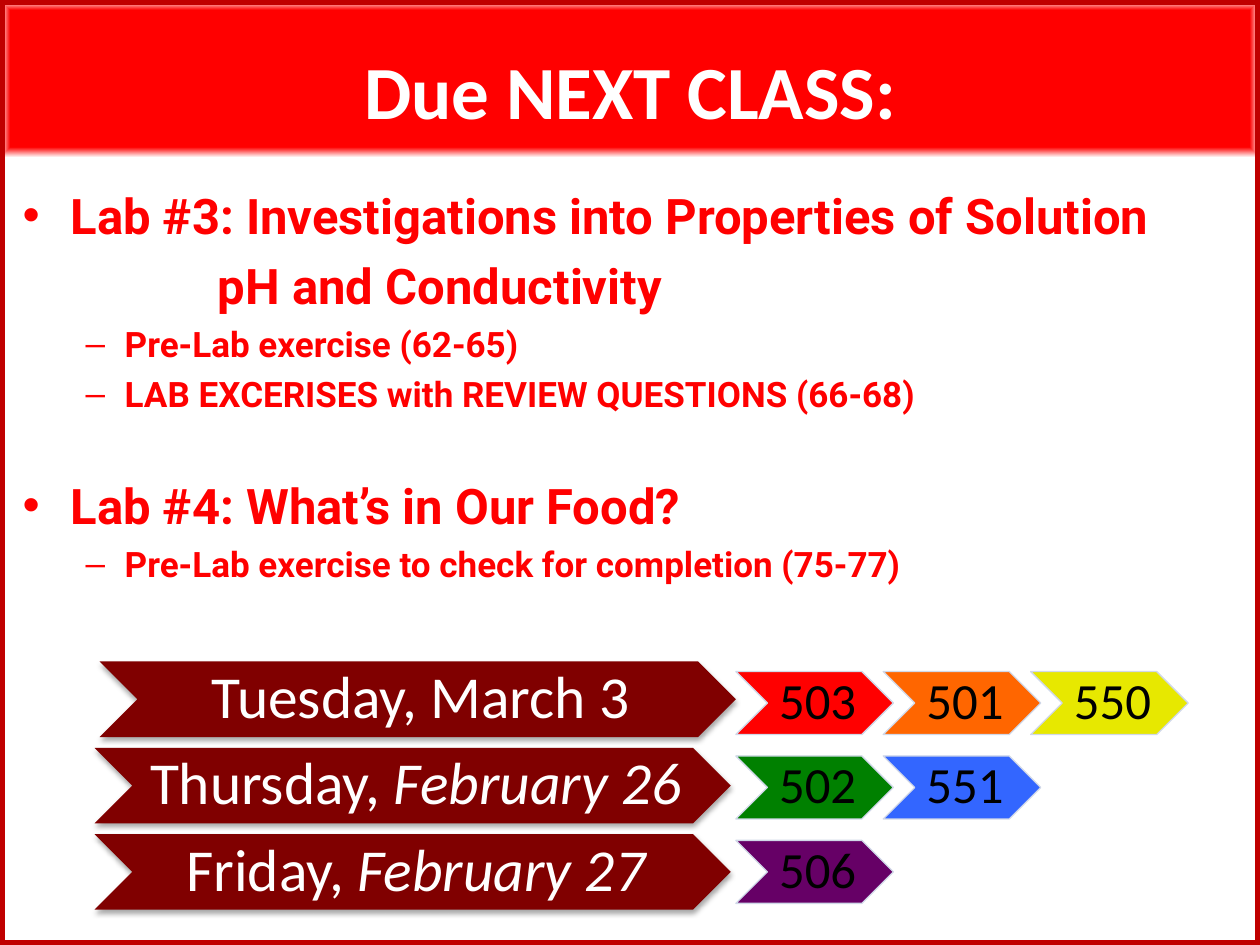
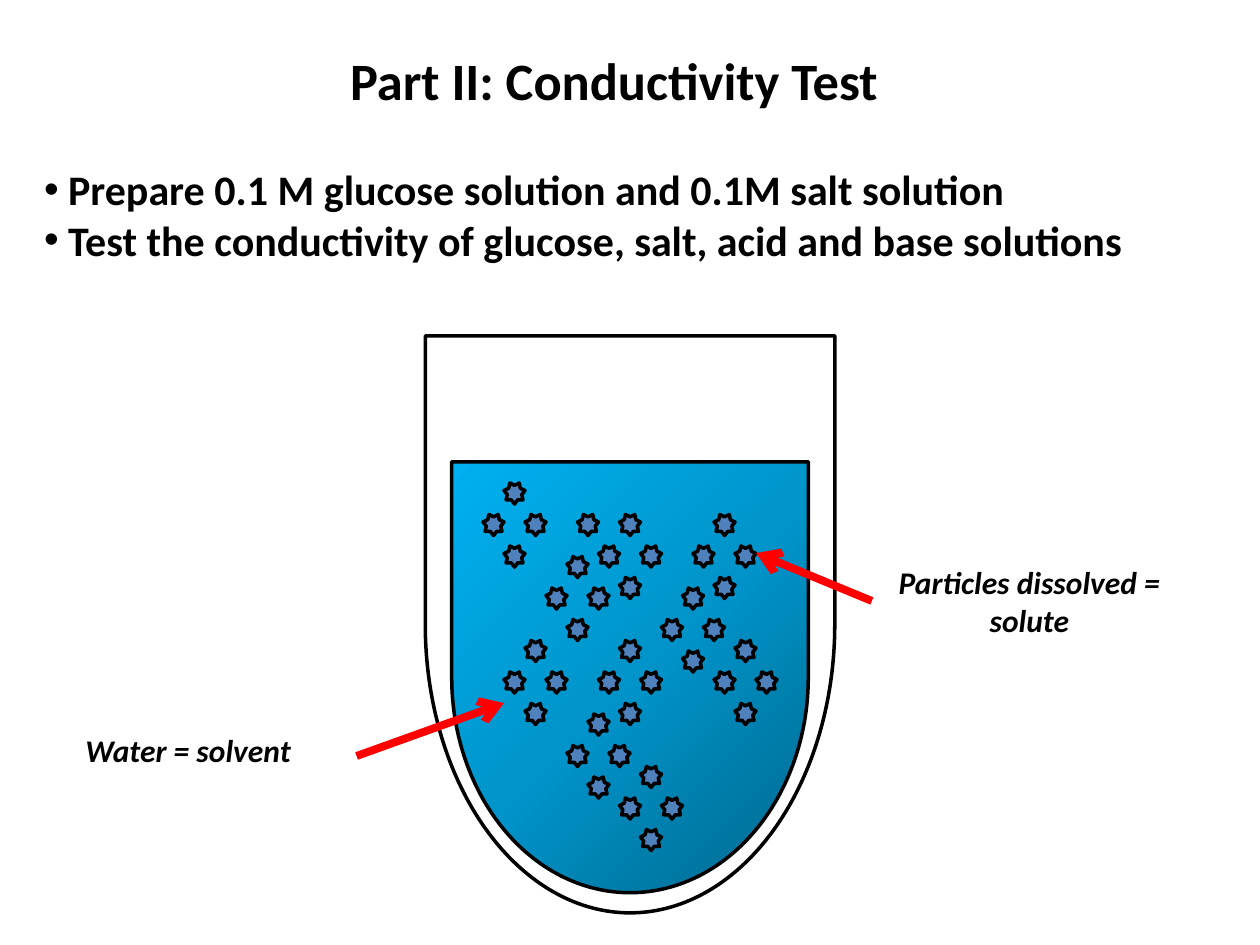
from lxml import etree
from pptx import Presentation
from pptx.dml.color import RGBColor
from pptx.enum.shapes import MSO_CONNECTOR, MSO_SHAPE
from pptx.enum.text import MSO_ANCHOR, MSO_AUTO_SIZE, PP_ALIGN
from pptx.oxml import parse_xml
from pptx.oxml.ns import nsdecls, qn
from pptx.util import Inches, Pt

CENTER, LEFT = PP_ALIGN.CENTER, PP_ALIGN.LEFT
TOP, MIDDLE = MSO_ANCHOR.TOP, MSO_ANCHOR.MIDDLE
CHEVRON, STAR = MSO_SHAPE.CHEVRON, MSO_SHAPE.STAR_7_POINT
TUBE, RECTANGLE = MSO_SHAPE.FLOWCHART_DELAY, MSO_SHAPE.RECTANGLE

WIDTH, HEIGHT = 10, 7.5
COLORS = {
    "white": "FFFFFF", "black": "000000", "red": "FF0000", "frame": "C00000",
    "maroon": "800000", "badge line": "D0D8E8", "orange": "FF6600",
    "yellow": "E7E800", "green": "008000", "blue": "3366FF",
    "purple": "660066", "particle": "4F81BD",
    "deep water": "00688E", "mid water": "0094CA", "light water": "00B0F0",
}

DUE_TITLE = "Due NEXT CLASS:"
# text, level, size, left margin, first-line indent, space before
ASSIGNMENTS = [
    ("Lab #3: Investigations into Properties of Solution", 0, 28, 0.38, -0.38, 6.6),
    ("pH and Conductivity", 0, 28, 1.55, None, 6.6),
    ("Pre-Lab exercise (62-65)", 1, 20, 0.81, -0.31, 4.7),
    ("LAB EXCERISES with REVIEW QUESTIONS (66-68)", 1, 20, 0.81, -0.31, 4.7),
    ("Lab #4: What’s in Our Food?", 0, 28, 0.38, -0.38, 34.6),
    ("Pre-Lab exercise to check for completion (75-77)", 1, 20, 0.81, -0.31, 4.7),
]
# left edge, weekday, date, date in italics, class sections
SCHEDULE = [
    (0.79, "Tuesday, ", "March 3", False,
     [("503", "red"), ("501", "orange"), ("550", "yellow")]),
    (0.75, "Thursday, ", "February 26", True, [("502", "green"), ("551", "blue")]),
    (0.75, "Friday, ", "February 27", True, [("506", "purple")]),
]

TEST_TITLE = "Part II: Conductivity Test"
TEST_STEPS = [
    "Prepare 0.1 M glucose solution and 0.1M salt solution",
    "Test the conductivity of glucose, salt, acid and base solutions",
]
LABELS = [
    ("Water = solvent", (0.58, 5.75, 2.5, 0.4), LEFT),
    ("Particles dissolved = solute", (6.92, 4.42, 2.5, 0.71), CENTER),
]
ARROWS = [((2.83, 6), (4, 5.58)), ((6.92, 4.77), (6, 4.39))]
# particle positions in twelfths of an inch; each cluster is a diamond of four
CELL = 1 / 12
CLUSTER_TOPS = [(65, 56), (68, 49), (70, 61), (59, 49), (56, 68),
                (59, 61), (61, 73), (50, 61), (54, 53), (48, 46)]
DIAMOND = [(0, 0), (2, 3), (-2, 3), (0, 6)]
LONE_PARTICLE = (55, 49)


def rgb(name):
    return RGBColor.from_string(COLORS[name])


def place(shape, box):
    shape.left, shape.top, shape.width, shape.height = map(Inches, box)


def add_shape(slide, preset, box, fill=None, line=None, weight=0.75):
    shape = slide.shapes.add_shape(preset, *map(Inches, box))
    shape.shadow.inherit = False
    if fill:
        shape.fill.solid()
        shape.fill.fore_color.rgb = rgb(fill)
    else:
        shape.fill.background()
    set_line(shape, line, weight)
    return shape


def set_line(shape, color, weight):
    if color:
        shape.line.color.rgb = rgb(color)
        shape.line.width = Pt(weight)
    else:
        shape.line.fill.background()


def set_gradient(shape, stops, direction):
    """Fill with (percent, colour) stops; direction is the a:lin or a:path element."""
    shape.fill.background()
    gs = "".join(f'<a:gs pos="{pos * 1000}"><a:srgbClr val="{COLORS[name]}"/></a:gs>'
                 for pos, name in stops)
    gradient = parse_xml(f'<a:gradFill {nsdecls("a")} rotWithShape="1">'
                         f'<a:gsLst>{gs}</a:gsLst>{direction}</a:gradFill>')
    properties = shape.fill._xPr
    properties.replace(properties.find(qn("a:noFill")), gradient)


def add_drop_shadow(shape):
    effects = shape._element.spPr.find(qn("a:effectLst"))
    effects.append(parse_xml(
        f'<a:outerShdw {nsdecls("a")} blurRad="{Pt(3.1)}" dist="{Pt(1.8)}" dir="5400000" '
        f'rotWithShape="0"><a:srgbClr val="{COLORS["black"]}"><a:alpha val="35000"/>'
        '</a:srgbClr></a:outerShdw>'))


def format_frame(frame, anchor, insets=(0.1, 0.05, 0.1, 0.05)):
    frame.word_wrap = True
    frame.auto_size = MSO_AUTO_SIZE.NONE
    frame.vertical_anchor = anchor
    (frame.margin_left, frame.margin_top,
     frame.margin_right, frame.margin_bottom) = map(Inches, insets)


def format_runs(paragraph, size, color, font="Calibri", bold=False, italic=False):
    for run in paragraph.runs:
        run.font.size, run.font.name = Pt(size), font
        run.font.bold, run.font.italic = bold, italic
        run.font.color.rgb = rgb(color)


def indent(paragraph, margin, first_line):
    """Hang the bullet, or drop it when there is no first-line indent."""
    properties = paragraph._p.get_or_add_pPr()
    properties.set("marL", str(Inches(margin)))
    properties.set("indent", str(Inches(first_line or 0)))
    if first_line is None:
        etree.SubElement(properties, qn("a:buNone"))


def add_title(slide, text, box, size, color, anchor, insets=(0.1, 0.05, 0.1, 0.05)):
    title = slide.shapes.title
    place(title, box)
    format_frame(title.text_frame, anchor, insets)
    title.text_frame.text = text
    paragraph = title.text_frame.paragraphs[0]
    paragraph.alignment = CENTER
    format_runs(paragraph, size, color, bold=True)
    return title


def fill_body(slide, box, items, color, font):
    body = slide.placeholders[1]
    place(body, box)
    frame = body.text_frame
    format_frame(frame, TOP)
    frame.text = "\n".join(item[0] for item in items)
    for paragraph, (_, level, size, margin, first, before) in zip(frame.paragraphs, items):
        paragraph.level = level
        paragraph.space_before = Pt(before)
        indent(paragraph, margin, first)
        format_runs(paragraph, size, color, font, bold=True)


def add_chevron(slide, box, fill, line, parts, size, color):
    """Chevron with centred text; parts are (text, italic) pairs."""
    chevron = add_shape(slide, CHEVRON, box, fill, line)
    format_frame(chevron.text_frame, MIDDLE, (0.05, 0.02, 0, 0.02))
    paragraph = chevron.text_frame.paragraphs[0]
    paragraph.alignment, paragraph.line_spacing = CENTER, 0.9
    for text, _ in parts:
        paragraph.add_run().text = text
    format_runs(paragraph, size, color)
    for run, (_, italic) in zip(paragraph.runs, parts):
        run.font.italic = italic
    return chevron


def add_arrow(slide, start, end):
    arrow = slide.shapes.add_connector(MSO_CONNECTOR.STRAIGHT, *map(Inches, start + end))
    set_line(arrow, "red", 4.5)
    etree.SubElement(arrow.line._get_or_add_ln(), qn("a:tailEnd"), type="arrow")
    etree.SubElement(arrow._element.spPr, qn("a:effectLst"))


def build_due_slide(slide):
    title = add_title(slide, DUE_TITLE, (0, 0, WIDTH, HEIGHT / 6), 42.9, "white",
                      MIDDLE, (0.1, 0.22, 0.1, 0.05))
    set_gradient(title, [(0, "red"), (87, "red"), (100, "white")],
                 '<a:path path="rect"><a:fillToRect l="50000" t="50000" '
                 'r="50000" b="50000"/></a:path>')
    set_line(title, "white", 0.75)
    fill_body(slide, (0.08, 1.42, 9.83, 5.67), ASSIGNMENTS, "red", "Roboto")
    add_shape(slide, RECTANGLE, (0, 0, WIDTH, HEIGHT), line="frame", weight=6)
    for row, (left, weekday, date, italic, sections) in enumerate(SCHEDULE):
        day = add_chevron(slide, (left, 5.25 + 0.685 * row, 5.05, 0.6), "maroon", None,
                          [(weekday, False), (date, italic)], 34, "white")
        add_drop_shadow(day)
        for column, (section, color) in enumerate(sections):
            box = (5.84 + 1.17 * column, 5.33 + 0.67 * row, 1.25, 0.5)
            add_chevron(slide, box, color, "badge line", [(section, False)], 29, "black")


def build_test_slide(slide):
    add_title(slide, TEST_TITLE, (0.25, 0.33, 9.25, 0.8), 30, "black", TOP)
    fill_body(slide, (0.25, 1.25, 9.25, 1.2),
              [(step, 0, 24, 0.19, -0.19, 0) for step in TEST_STEPS], "black", "Calibri")

    glass = add_shape(slide, TUBE, (2.71, 3.33, 4.58, 3.25), line="black", weight=2)
    water = add_shape(slide, TUBE, (3.29, 3.96, 3.42, 2.83), line="black", weight=2)
    glass.rotation = water.rotation = 90
    set_gradient(water, [(0, "deep water"), (50, "mid water"), (100, "light water")],
                 f'<a:lin ang="{135 * 60000}" scaled="1"/>')

    particles = [(x + dx, y + dy) for x, y in CLUSTER_TOPS for dx, dy in DIAMOND]
    for x, y in particles + [LONE_PARTICLE]:
        box = (x * CELL, y * CELL, 2 * CELL, 2 * CELL)
        add_shape(slide, STAR, box, "particle", "black", 2).rotation = 180

    for text, box, alignment in LABELS:
        frame = slide.shapes.add_textbox(*map(Inches, box)).text_frame
        format_frame(frame, TOP)
        frame.text = text
        frame.paragraphs[0].alignment = alignment
        format_runs(frame.paragraphs[0], 18, "black", bold=True, italic=True)
    for start, end in ARROWS:
        add_arrow(slide, start, end)


def main():
    deck = Presentation()
    deck.slide_width, deck.slide_height = Inches(WIDTH), Inches(HEIGHT)
    for build in (build_due_slide, build_test_slide):
        build(deck.slides.add_slide(deck.slide_layouts[1]))
    deck.save("out.pptx")


if __name__ == "__main__":
    main()
